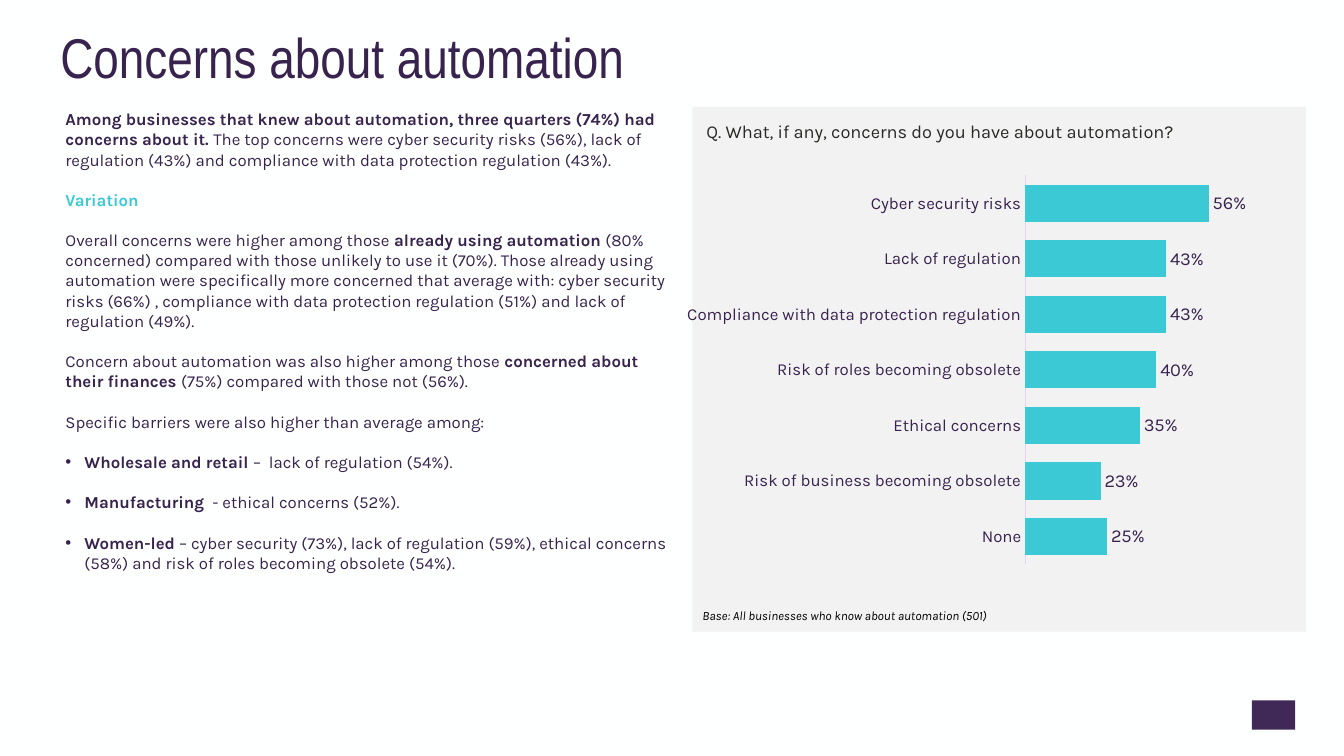
from dataclasses import dataclass

from lxml import etree
from pptx import Presentation
from pptx import util as u
from pptx.chart import data as chart_data
from pptx.dml import color
from pptx.enum import chart as charts, shapes, text


@dataclass(frozen=True)
class Theme:
    background: str = "FEFFFF"
    purple: str = "402957"
    ink: str = "38234E"
    teal: str = "3BC9D5"
    panel: str = "F2F2F2"
    question: str = "292926"
    black: str = "000000"
    axis: str = "E1D6ED"
    heading_font: str = "Arial Narrow"
    body_font: str = "Karla"
    title_size: int = 40
    large_size: int = 13
    body_size: int = 12
    base_size: int = 9
    paragraph_gap: float = 14.4


theme = Theme()
rgb = color.RGBColor.from_string


def style(font, size, ink, name=theme.body_font, bold=False, italic=False):
    font.size, font.name = u.Pt(size), name
    font.bold, font.italic = bold, italic
    font.color.rgb = rgb(ink)


def add_text_box(left, top, width, height, anchor=text.MSO_ANCHOR.MIDDLE):
    box = page.shapes.add_textbox(u.Cm(left), u.Cm(top), u.Cm(width), u.Cm(height))
    box.text_frame.word_wrap = True
    box.text_frame.vertical_anchor = anchor
    return box.text_frame


# Page
deck = Presentation()
deck.slide_width, deck.slide_height = u.Cm(33.87), u.Cm(19.05)
page = deck.slides.add_slide(deck.slide_layouts[6])
page.background.fill.solid()
page.background.fill.fore_color.rgb = rgb(theme.background)

# Page marker and chart panel
for left, top, width, height, fill in (
    (31.55, 17.65, 1.09, 0.74, theme.purple),
    (17.45, 2.69, 15.47, 13.23, theme.panel),
):
    block = page.shapes.add_shape(
        shapes.MSO_SHAPE.RECTANGLE, u.Cm(left), u.Cm(top), u.Cm(width), u.Cm(height))
    block.shadow.inherit = False
    block.fill.solid()
    block.fill.fore_color.rgb = rgb(fill)
    block.line.fill.background()

# Title, chart question and base note
single_lines = (
    ((1.27, 0.53, 29.21, 1.96), "Concerns about automation",
     dict(size=theme.title_size, ink=theme.ink, name=theme.heading_font)),
    ((17.55, 2.74, 15.67, 1.12), "Q. What, if any, concerns do you have about automation?",
     dict(size=theme.large_size, ink=theme.question)),
    ((17.45, 15.19, 14.88, 0.66), "Base: All businesses who know about automation (501)",
     dict(size=theme.base_size, ink=theme.black, italic=True)),
)
for place, words, look in single_lines:
    para = add_text_box(*place).paragraphs[0]
    if look["size"] == theme.title_size:
        para.line_spacing = 0.9
    span = para.add_run()
    span.text = words
    style(span.font, **look)

# Commentary: (bulleted, colour, runs as (words, bold))
commentary = (
    (False, theme.ink, (
        ("Among businesses that knew about automation, three quarters (74%) had "
         "concerns about it. ", True),
        ("The top concerns were cyber security risks (56%), lack of regulation (43%) "
         "and compliance with data protection regulation (43%).", False))),
    (False, theme.teal, (("Variation", True),)),
    (False, theme.ink, (
        ("Overall concerns were higher among those ", False),
        ("already using automation ", True),
        ("(80% concerned) compared with those unlikely to use it (70%). Those already "
         "using automation were specifically more concerned that average with: cyber "
         "security risks (66%) , compliance with data protection regulation (51%) and "
         "lack of regulation (49%).", False))),
    (False, theme.ink, (
        ("Concern about automation was also higher among those ", False),
        ("concerned about their finances ", True),
        ("(75%) compared with those not (56%).", False))),
    (False, theme.ink, (
        ("Specific barriers were also higher than average among:", False),)),
    (True, theme.ink, (
        ("Wholesale and retail ", True), ("–  lack of regulation (54%).", False))),
    (True, theme.ink, (
        ("Manufacturing ", True), (" - ethical concerns (52%).", False))),
    (True, theme.ink, (
        ("Women-led", True),
        (" – cyber security (73%), lack of regulation (59%), ethical concerns (58%) "
         "and risk of roles becoming obsolete (54%).", False))),
)
frame = add_text_box(1.4, 2.62, 15.75, 13.08, text.MSO_ANCHOR.TOP)
for index, (bulleted, ink, runs) in enumerate(commentary):
    para = frame.add_paragraph() if index else frame.paragraphs[0]
    if index:
        para.space_before = u.Pt(theme.paragraph_gap)
    if bulleted:
        settings = para._p.get_or_add_pPr()
        settings.set("marL", str(u.Cm(0.48)))
        settings.set("indent", str(-u.Cm(0.48)))
        namespace = settings.nsmap["a"]
        etree.SubElement(settings, f"{{{namespace}}}buFont", typeface="Arial")
        etree.SubElement(settings, f"{{{namespace}}}buChar", char="•")
    for words, bold in runs:
        span = para.add_run()
        span.text = words
        style(span.font, theme.body_size, ink, bold=bold)

# Bar chart
concerns = {
    "Cyber security risks": 0.56,
    "Lack of regulation": 0.43,
    "Compliance with data protection regulation": 0.43,
    "Risk of roles becoming obsolete": 0.4,
    "Ethical concerns": 0.35,
    "Risk of business becoming obsolete": 0.23,
    "None": 0.25,
}
figures = chart_data.CategoryChartData(number_format="0%")
figures.categories = list(concerns)
figures.add_series("Series 1", list(concerns.values()))
chart = page.shapes.add_chart(
    charts.XL_CHART_TYPE.BAR_CLUSTERED,
    u.Cm(17.09), u.Cm(4.32), u.Cm(14.58), u.Cm(10.21), figures).chart
chart.has_legend = chart.has_title = False
style(chart.font, theme.large_size, theme.ink)

# Axes
categories, values = chart.category_axis, chart.value_axis
categories.reverse_order = True
categories.major_tick_mark = charts.XL_TICK_MARK.NONE
categories.format.line.color.rgb = rgb(theme.axis)
categories.format.line.width = u.Pt(0.75)
style(categories.tick_labels.font, theme.body_size, theme.ink)
values.minimum_scale, values.maximum_scale = 0, 0.6
values.has_major_gridlines = False
values.visible = False

# Bars and value labels
plot = chart.plots[0]
plot.gap_width = 50
plot.vary_by_categories = False
bars = plot.series[0]
bars.format.fill.solid()
bars.format.fill.fore_color.rgb = rgb(theme.teal)
labels = bars.data_labels
labels.show_value = True
labels.position = charts.XL_LABEL_POSITION.OUTSIDE_END
labels.number_format, labels.number_format_is_linked = "0%", False
style(labels.font, theme.large_size, theme.ink)

# Fixed plot area inside the chart
area = chart._chartSpace.chart.plotArea
namespace = area.nsmap["c"]
for previous in area.findall(f"{{{namespace}}}layout"):
    area.remove(previous)
layout = etree.Element(f"{{{namespace}}}layout")
area.insert(0, layout)
manual = etree.SubElement(layout, f"{{{namespace}}}manualLayout")
for tag, value in (("layoutTarget", "inner"), ("xMode", "edge"), ("yMode", "edge"),
                   ("x", 0.6), ("y", 0.01), ("w", 0.34), ("h", 0.96)):
    etree.SubElement(manual, f"{{{namespace}}}{tag}", val=str(value))

deck.save("out.pptx")
